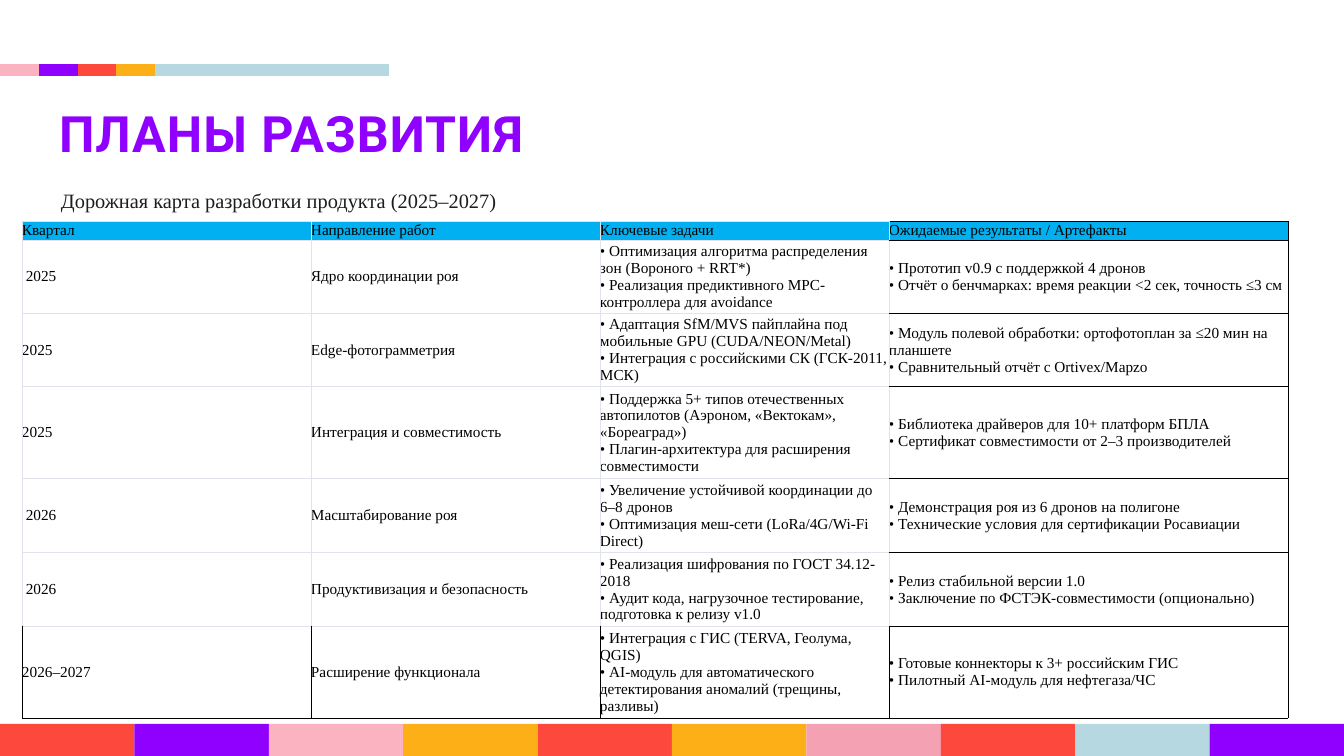
from itertools import pairwise

from lxml import etree
from pptx import Presentation
from pptx import util as u
from pptx.dml.color import RGBColor
from pptx.enum import shapes, text
from pptx.oxml import ns

PX = 14961
SERIF = "Times New Roman"
HUES = {
    "pink": "FBB3C1", "rose": "F4A1B3", "violet": "8F00FF", "red": "FD493D",
    "amber": "FCAF17", "sky": "B5D8E1", "head": "00B0F0", "ink": "1D1D1F",
    "black": "000000", "pale": "E1E3EA",
}
TOP = ["pink", "violet", "red", "amber", "sky"]
BASE = ["red", "violet", "pink", "amber", "red",
        "amber", "rose", "red", "sky", "violet"]
COLS = [289, 289, 289, 399]
ROWS = [19, 73, 73, 92, 74, 73, 92]
PLAN = [
    ["Квартал", "Направление работ", "Ключевые задачи",
     "Ожидаемые результаты / Артефакты"],
    [" 2025", "Ядро координации роя",
     "• Оптимизация алгоритма распределения зон (Вороного + RRT*)\v"
     "• Реализация предиктивного MPC-контроллера для avoidance",
     "• Прототип v0.9 с поддержкой 4 дронов\v"
     "• Отчёт о бенчмарках: время реакции <2 сек, точность ≤3 см"],
    ["2025", "Edge-фотограмметрия",
     "• Адаптация SfM/MVS пайплайна под мобильные GPU (CUDA/NEON/Metal)\v"
     "• Интеграция с российскими СК (ГСК-2011, МСК)",
     "• Модуль полевой обработки: ортофотоплан за ≤20 мин на планшете\v"
     "• Сравнительный отчёт с Ortivex/Mapzo"],
    ["2025", "Интеграция и совместимость",
     "• Поддержка 5+ типов отечественных автопилотов "
     "(Аэроном, «Вектокам», «Бореаград»)\v"
     "• Плагин-архитектура для расширения совместимости",
     "• Библиотека драйверов для 10+ платформ БПЛА\v"
     "• Сертификат совместимости от 2–3 производителей"],
    [" 2026", "Масштабирование роя",
     "• Увеличение устойчивой координации до 6–8 дронов\v"
     "• Оптимизация меш-сети (LoRa/4G/Wi-Fi Direct)",
     "• Демонстрация роя из 6 дронов на полигоне\v"
     "• Технические условия для сертификации Росавиации"],
    [" 2026", "Продуктивизация и безопасность",
     "• Реализация шифрования по ГОСТ 34.12-2018\v"
     "• Аудит кода, нагрузочное тестирование, подготовка к релизу v1.0",
     "• Релиз стабильной версии 1.0\v"
     "• Заключение по ФСТЭК-совместимости (опционально)"],
    ["2026–2027", "Расширение функционала",
     "• Интеграция с ГИС (TERVA, Геолума, QGIS)\v"
     "• AI-модуль для автоматического детектирования аномалий "
     "(трещины, разливы)",
     "• Готовые коннекторы к 3+ российским ГИС\v"
     "• Пилотный AI-модуль для нефтегаза/ЧС"],
]


def px(*vals):
    return [round(v * PX) for v in vals]


def rgb(hue):
    return RGBColor.from_string(HUES[hue])


def write(frame, words, size=18, font=SERIF, hue="black", bold=False, gap=0):
    frame.word_wrap = True
    para = frame.paragraphs[0]
    para.text = words
    para.alignment = text.PP_ALIGN.LEFT
    for run in para.runs:
        run.font.size = u.Pt(size)
        run.font.name = font
        run.font.bold = bold
        run.font.color.rgb = rgb(hue)
        if gap:
            run._r.get_or_add_rPr().set("spc", str(gap))


def inset(frame, left=0, top=0):
    frame.margin_left, frame.margin_top = px(left, top)
    frame.margin_right = frame.margin_bottom = 0


def strip(slide, top, high, hues, edges):
    for hue, (left, right) in zip(hues, pairwise(edges)):
        bar = slide.shapes.add_shape(shapes.MSO_SHAPE.RECTANGLE,
                                     *px(left, top, right - left, high))
        bar.shadow.inherit = False
        bar.fill.solid()
        bar.fill.fore_color.rgb = rgb(hue)
        bar.line.fill.background()


def title(slide, left, top, wide, high):
    head = slide.shapes.title
    head.left, head.top, head.width, head.height = px(left, top, wide, high)
    frame = head.text_frame
    inset(frame, left=1, top=2)
    frame.auto_size = text.MSO_AUTO_SIZE.NONE
    frame.vertical_anchor = text.MSO_ANCHOR.TOP
    write(frame, "ПЛАНЫ РАЗВИТИЯ", size=59, font="Roboto", hue="violet",
          bold=True, gap=120)


def lead(slide, left, top, wide, high):
    frame = slide.shapes.add_textbox(*px(left, top, wide, high)).text_frame
    inset(frame, left=11, top=3)
    write(frame, "Дорожная карта разработки продукта (2025–2027)",
          size=24, hue="ink")


def border(cell, side, hue, width):
    line = etree.SubElement(cell._tc.get_or_add_tcPr(), ns.qn(f"a:ln{side}"),
                            w=str(u.Pt(width)))
    fill = etree.SubElement(line, ns.qn("a:solidFill"))
    etree.SubElement(fill, ns.qn("a:srgbClr"), val=HUES[hue])


def plan(slide, left, top):
    grid = slide.shapes.add_table(len(ROWS), len(COLS),
                                  *px(left, top, sum(COLS), sum(ROWS))).table
    grid.first_row = grid.horz_banding = False
    for col, wide in zip(grid.columns, px(*COLS)):
        col.width = wide
    for row, high in zip(grid.rows, px(*ROWS)):
        row.height = high
    for r, line in enumerate(PLAN):
        for c, words in enumerate(line):
            cell = grid.cell(r, c)
            inset(cell)
            cell.vertical_anchor = text.MSO_ANCHOR.MIDDLE
            write(cell.text_frame, words)
            last, end = r == len(ROWS) - 1, c == len(COLS) - 1
            rim = {"L": c == 0, "R": end, "T": r == 0, "B": last}
            for side, outer in rim.items():
                dark = (end and side != "L") or (last and side != "T")
                border(cell, side, "black" if dark else "pale",
                       0.75 if outer else 0.6)
            if r == 0:
                cell.fill.solid()
                cell.fill.fore_color.rgb = rgb("head")
            else:
                cell.fill.background()


def main():
    deck = Presentation()
    deck.slide_width, deck.slide_height = px(1344, 756)
    slide = deck.slides.add_slide(deck.slide_layouts[5])
    strip(slide, 64, 12, TOP, [0, 39, 78, 116, 155, 389])
    strip(slide, 724, 32, BASE, [1344 * i / 10 for i in range(11)])
    title(slide, 58, 100, 1255, 62)
    lead(slide, 50, 185, 540, 31)
    plan(slide, 22, 221)
    deck.save("out.pptx")


if __name__ == "__main__":
    main()
